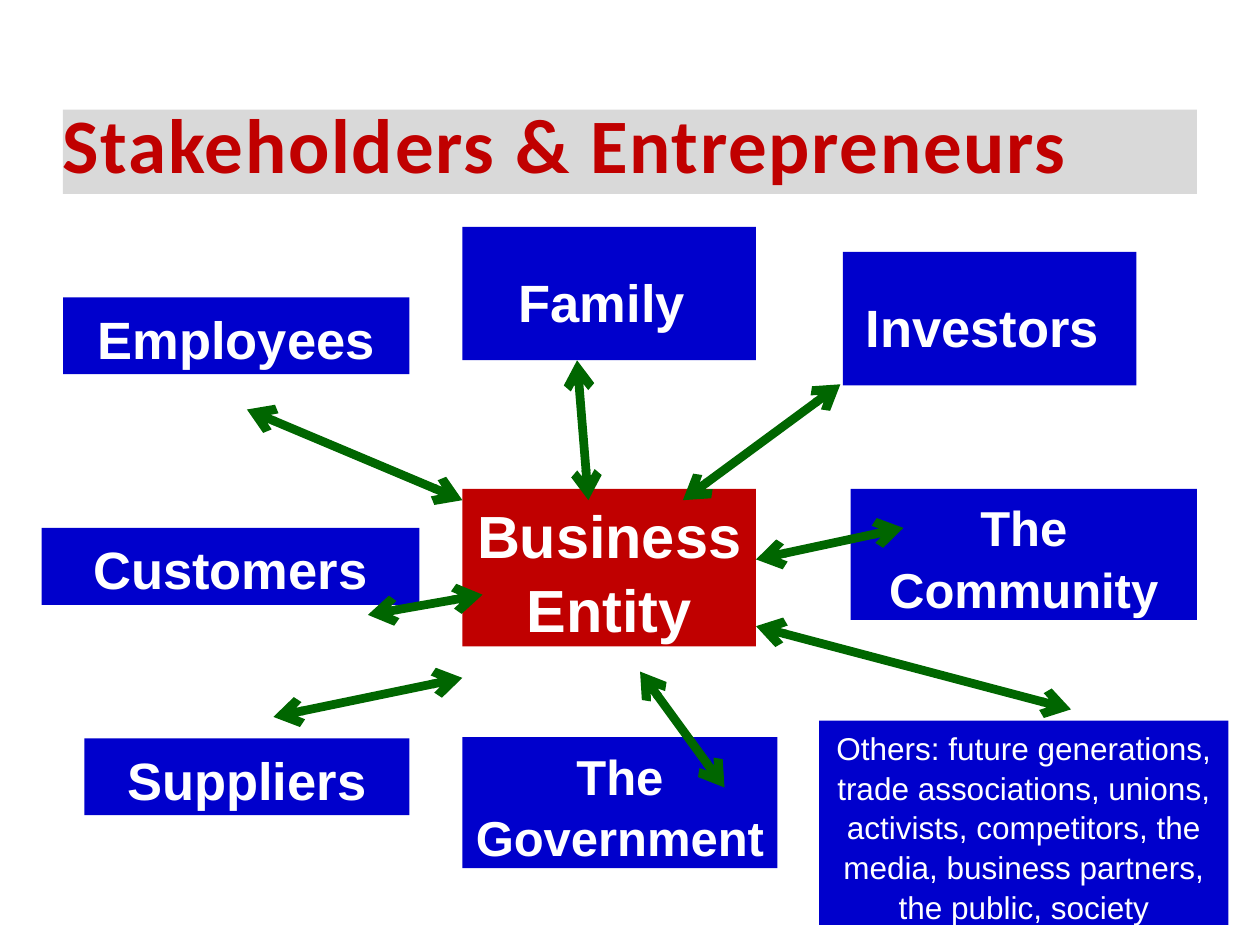
"""Build a slide mapping the stakeholders around a business entity."""
from lxml import etree
from pptx import Presentation
from pptx.dml.color import RGBColor
from pptx.enum.shapes import MSO_CONNECTOR, MSO_SHAPE
from pptx.enum.text import MSO_ANCHOR, PP_ALIGN
from pptx.oxml.ns import qn
from pptx.util import Inches, Pt

RED, BLUE, GREEN, GREY, WHITE = "C00000", "0000CC", "006600", "D9D9D9", "FFFFFF"


def rgb(value):
    return RGBColor.from_string(value)


def add_box(s, box, text, size, fill, bold=True, color=WHITE, font="Arial"):
    sp = s.shapes.add_shape(MSO_SHAPE.RECTANGLE, *[Inches(v) for v in box])
    sp.shadow.inherit = False
    sp.fill.solid()
    sp.fill.fore_color.rgb = rgb(fill)
    sp.line.fill.background()
    tf = sp.text_frame
    tf.word_wrap = True
    tf.vertical_anchor = MSO_ANCHOR.TOP
    p = tf.paragraphs[0]
    p.alignment = PP_ALIGN.CENTER
    p.line_spacing = 1.05
    r = p.add_run()
    r.text = text
    r.font.name = font
    r.font.size = Pt(size)
    r.font.bold = bold
    r.font.color.rgb = rgb(color)
    return tf


prs = Presentation()
prs.slide_width, prs.slide_height = Inches(10), Inches(7.5)
s = prs.slides.add_slide(prs.slide_layouts[6])

add_box(s, (3.67, 3.88, 2.33, 1.25), "Business Entity", 34, RED)

stakeholders = [
    ((3.67, 5.85, 2.5, 1.04), "The Government", 28),
    ((0.67, 5.86, 2.58, 0.61), "Suppliers", 30),
    ((0.5, 2.36, 2.75, 0.61), "Employees", 30),
    ((0.33, 4.19, 3, 0.61), "Customers", 30),
    ((6.75, 3.88, 2.75, 1.04), "The Community", 28),
]
for box, text, size in stakeholders:
    add_box(s, box, text, size, BLUE)

others = ("Others: future generations, trade associations, unions, activists, "
          "competitors, the media, business partners, the public, society")
add_box(s, (6.5, 5.72, 3.25, 1.62), others, 18, BLUE, bold=False)

for left, top, text in [(3.67, 1.8, "Family "), (6.69, 2, "Investors ")]:
    tf = add_box(s, (left, top, 2.33, 1.06), text, 30, BLUE)
    tf.margin_top = Inches(0.32)

arrows = [
    (4.58, 2.86, 4.67, 3.97),
    (1.96, 3.25, 3.67, 3.97),
    (5.42, 3.97, 6.67, 3.05),
    (6, 4.97, 8.5, 5.63),
    (5.08, 5.33, 5.75, 6.25),
    (6, 4.44, 7.17, 4.19),
    (2.17, 5.69, 3.67, 5.38),
    (2.92, 4.88, 3.83, 4.72),
]
for ends in arrows:
    cxn = s.shapes.add_connector(MSO_CONNECTOR.STRAIGHT, *[Inches(v) for v in ends])
    cxn.line.color.rgb = rgb(GREEN)
    cxn.line.width = Pt(5)
    ln = cxn.line._get_or_add_ln()
    for tag in ("a:headEnd", "a:tailEnd"):
        etree.SubElement(ln, qn(tag), type="arrow")
    etree.SubElement(cxn._element.spPr, qn("a:effectLst"))

tf = add_box(s, (0.5, 0.87, 9, 0.67), "Stakeholders & Entrepreneurs", 44, GREY,
             color=RED, font="Calibri")
tf.margin_left = tf.margin_right = tf.margin_top = tf.margin_bottom = 0
tf.vertical_anchor = MSO_ANCHOR.MIDDLE
p = tf.paragraphs[0]
p.alignment = PP_ALIGN.LEFT
p.line_spacing = 0.8
p.runs[0].font._element.set("spc", "100")

prs.save("out.pptx")
